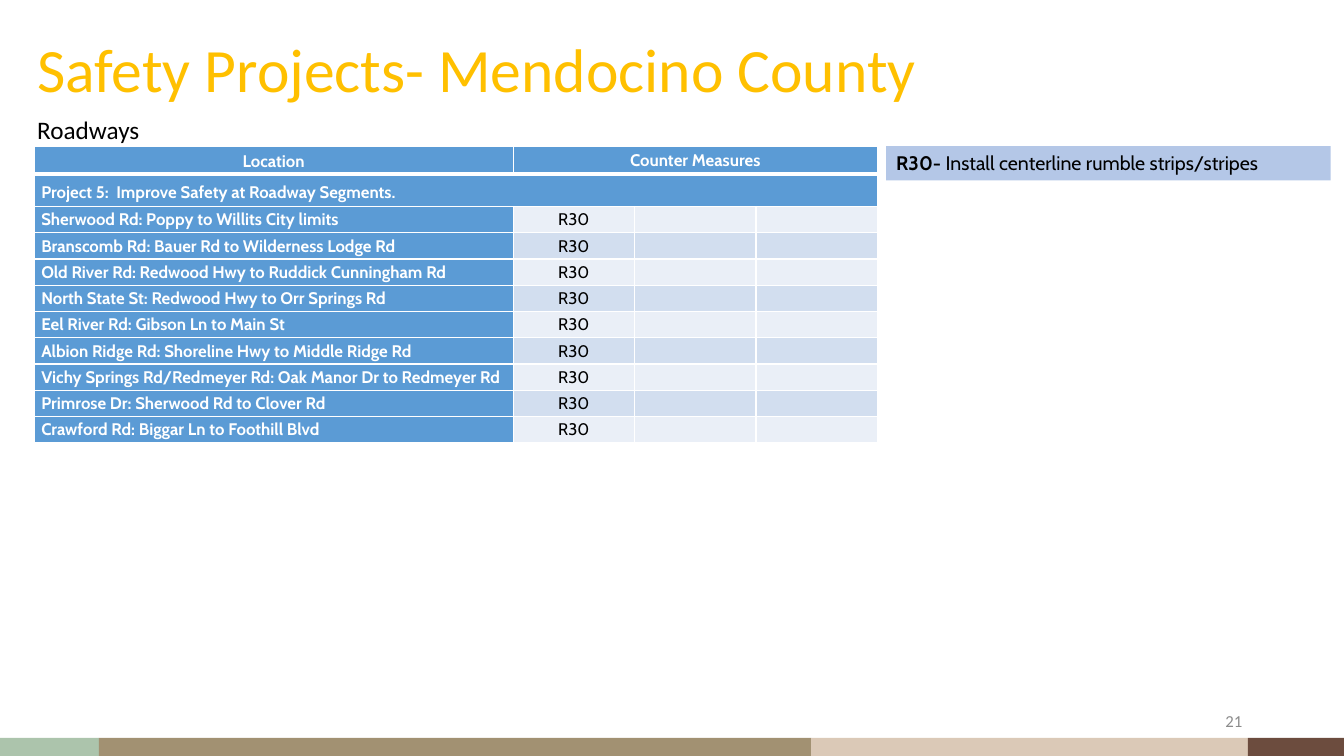
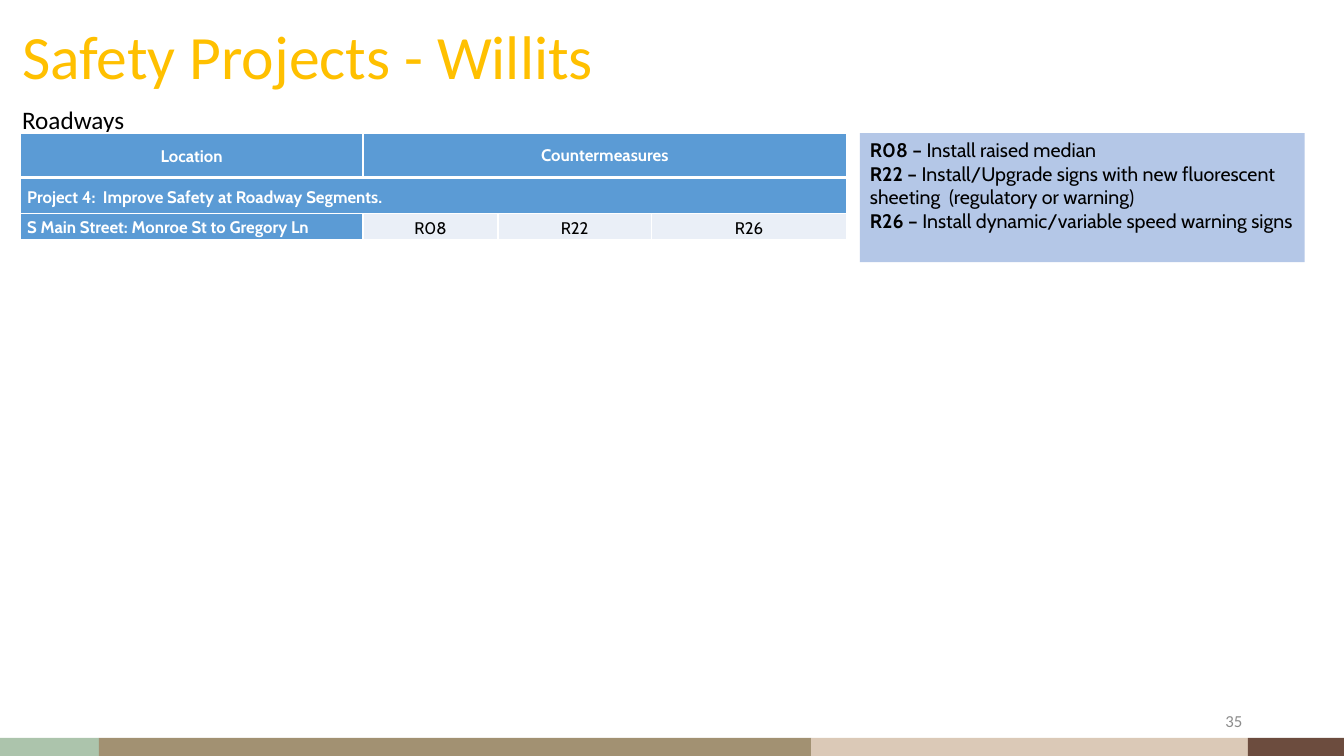
from itertools import accumulate

from lxml.etree import SubElement
from pptx import Presentation
from pptx.dml.color import RGBColor
from pptx.enum.shapes import MSO_SHAPE as Shape
from pptx.enum.text import MSO_ANCHOR as Anchor, PP_ALIGN as Align
from pptx.oxml.ns import qn
from pptx.util import Inches, Pt

WIDTH, HEIGHT = Inches(13.33), Inches(7.5)

WHITE = RGBColor(0xFF, 0xFF, 0xFF)
BLACK = RGBColor(0x00, 0x00, 0x00)
GOLD = RGBColor(0xFF, 0xC0, 0x00)
GREY = RGBColor(0x8C, 0x8C, 0x8C)
BLUE = RGBColor(0x5B, 0x9B, 0xD5)
PALE = RGBColor(0xEA, 0xEF, 0xF7)
LIGHT = RGBColor(0xD2, 0xDE, 0xEF)
NOTE_BLUE = RGBColor(0xB4, 0xC7, 0xE7)

# Footer bands: share of the slide's width in percent, and colour
BANDS = (
    (7.35, RGBColor(0xAC, 0xC4, 0xAC)),
    (53, RGBColor(0xA2, 0x91, 0x72)),
    (32.5, RGBColor(0xDB, 0xC9, 0xB7)),
    (7.35, RGBColor(0x6C, 0x4C, 0x3E)),
)

TITLE = dict(name="Calibri", size=Pt(44), color=GOLD)
SUBTITLE = dict(name="Calibri", size=Pt(18), color=BLACK)
NUMBER = dict(name="Calibri", size=Pt(12), color=GREY)
NOTE = dict(name="Cabin", size=Pt(14), color=BLACK, bold=False)
NOTE_CODE = NOTE | dict(bold=True)
HEADING = dict(name="Cabin", size=Pt(12), color=WHITE, bold=True)
CODE = HEADING | dict(color=BLACK, bold=False)

BODY_ROW = 3.47
CODE_COLUMNS = 3


def across(percent):
    return int(WIDTH * percent / 100)


def down(percent):
    return int(HEIGHT * percent / 100)


def place(left, top, width, height):
    """Turn shares of the slide into a position and size."""
    return across(left), down(top), across(width), down(height)


def add_span(para, text, style):
    span = para.add_run()
    span.text = text
    for name, value in style.items():
        if name == "color":
            span.font.color.rgb = value
        else:
            setattr(span.font, name, value)


def add_text(page, area, text, style, anchor=Anchor.TOP, align=Align.LEFT, spacing=1.0):
    frame = page.shapes.add_textbox(*place(*area)).text_frame
    frame.word_wrap = True
    frame.vertical_anchor = anchor
    para = frame.paragraphs[0]
    para.alignment, para.line_spacing = align, spacing
    add_span(para, text, style)


def add_block(page, area, color):
    block = page.shapes.add_shape(Shape.RECTANGLE, *place(*area))
    block.shadow.inherit = False
    block.fill.solid()
    block.fill.fore_color.rgb = color
    block.line.fill.background()
    return block


def add_bands(page):
    shares = [share for share, _ in BANDS]
    for left, (share, color) in zip(accumulate(shares, initial=0), BANDS):
        add_block(page, (left, 97.6, share, 2.5), color)


def add_note(page, area, lines):
    """Add the key that explains each countermeasure code."""
    frame = add_block(page, area, NOTE_BLUE).text_frame
    frame.word_wrap = True
    frame.vertical_anchor = Anchor.TOP
    for index, (code, meaning) in enumerate(lines):
        para = frame.add_paragraph() if index else frame.paragraphs[0]
        para.alignment = Align.LEFT
        add_span(para, code, NOTE_CODE)
        add_span(para, meaning, NOTE)


def set_borders(cell, top, bottom):
    properties = cell._tc.get_or_add_tcPr()
    for side, points in (("L", 1), ("R", 1), ("T", top), ("B", bottom)):
        line = SubElement(properties, qn(f"a:ln{side}"), w=str(Pt(points)))
        fill = SubElement(line, qn("a:solidFill"))
        SubElement(fill, qn("a:srgbClr"), val=str(WHITE))


def format_cell(cell, color, top=1, bottom=1):
    set_borders(cell, top, bottom)
    cell.fill.solid()
    cell.fill.fore_color.rgb = color
    cell.margin_left = cell.margin_right = Inches(0.07)
    cell.margin_top = cell.margin_bottom = 0


def write_cell(cell, text, style, align=Align.LEFT, anchor=Anchor.TOP, spacing=1.15):
    cell.vertical_anchor = anchor
    para = cell.text_frame.paragraphs[0]
    para.alignment, para.line_spacing = align, spacing
    if text:
        add_span(para, text, style)
    else:
        SubElement(para._p, qn("a:endParaRPr"), sz=str(int(style["size"].pt * 100)))


def add_project_table(page, left, top, columns, head_rows, heading, project,
                      locations, code_anchor):
    """Add a table of locations, each with up to three countermeasure codes."""
    rows = [*head_rows, *[BODY_ROW] * len(locations)]
    area = place(left, top, sum(columns), sum(rows))
    table = page.shapes.add_table(len(rows), len(columns), *area).table
    for column, share in zip(table.columns, columns):
        column.width = across(share)
    for row, share in zip(table.rows, rows):
        row.height = down(share)

    for column in range(len(columns)):
        format_cell(table.cell(0, column), BLUE, bottom=3)
        format_cell(table.cell(1, column), BLUE, top=3)
    table.cell(0, 1).merge(table.cell(0, CODE_COLUMNS))
    table.cell(1, 0).merge(table.cell(1, CODE_COLUMNS))
    write_cell(table.cell(0, 0), "Location", HEADING, Align.CENTER, Anchor.MIDDLE)
    write_cell(table.cell(0, 1), heading, HEADING, Align.CENTER, Anchor.MIDDLE, 1.0)
    write_cell(table.cell(1, 0), project, HEADING, anchor=Anchor.MIDDLE)

    for index, (location, *codes) in enumerate(locations):
        row = index + len(head_rows)
        format_cell(table.cell(row, 0), BLUE)
        write_cell(table.cell(row, 0), location, HEADING)
        codes += [""] * (CODE_COLUMNS - len(codes))
        for column, code in enumerate(codes, start=1):
            cell = table.cell(row, column)
            format_cell(cell, LIGHT if index % 2 else PALE)
            write_cell(cell, code, CODE, Align.CENTER, code_anchor)


def add_page(deck, left, title_top, subtitle_top, title, number):
    page = deck.slides.add_slide(deck.slide_layouts[6])
    add_bands(page)
    add_text(page, (left, title_top, 86.27, 19.33), title, TITLE, Anchor.MIDDLE,
             spacing=0.9)
    add_text(page, (70.67, 92.67, 22.5, 5.33), number, NUMBER, Anchor.MIDDLE, Align.RIGHT)
    add_text(page, (left, subtitle_top, 11.25, 5.33), "Roadways", SUBTITLE)
    return page


def add_county_page(deck):
    page = add_page(deck, 2.03, 0, 14.4, "Safety Projects- Mendocino County", "21")
    roads = (
        "Sherwood Rd: Poppy to Willits City limits",
        "Branscomb Rd: Bauer Rd to Wilderness Lodge Rd",
        "Old River Rd: Redwood Hwy to Ruddick Cunningham Rd",
        "North State St: Redwood Hwy to Orr Springs Rd",
        "Eel River Rd: Gibson Ln to Main St",
        "Albion Ridge Rd: Shoreline Hwy to Middle Ridge Rd",
        "Vichy Springs Rd/Redmeyer Rd: Oak Manor Dr to Redmeyer Rd",
        "Primrose Dr: Sherwood Rd to Clover Rd",
        "Crawford Rd: Biggar Ln to Foothill Blvd",
    )
    add_project_table(
        page, 2.55, 19.33, (35.63, 9.04, 9.04, 9.04), (3.73, 4.27),
        "Counter Measures", "Project 5:  Improve Safety at Roadway Segments.",
        [(road, "R30") for road in roads], Anchor.TOP)
    add_note(page, (65.94, 19.33, 33.08, 4.53),
             [("R30- ", "Install centerline rumble strips/stripes")])


def add_willits_page(deck):
    page = add_page(deck, 0.9, -1.73, 13.2, "Safety Projects - Willits", "35")
    add_project_table(
        page, 1.5, 17.6, (25.51, 10.05, 11.4, 14.55), (5.87, 4.8),
        "Countermeasures", "Project 4:  Improve Safety at Roadway Segments.",
        [("S Main Street: Monroe St to Gregory Ln", "R08", "R22", "R26")],
        Anchor.MIDDLE)
    add_note(page, (63.99, 17.6, 33.08, 17.07), [
        ("R08 – ", "Install raised median"),
        ("R22 – ", "Install/Upgrade signs with new fluorescent sheeting  "
                   "(regulatory or warning)"),
        ("R26 – ", "Install dynamic/variable speed warning signs"),
    ])


def main():
    deck = Presentation()
    deck.slide_width, deck.slide_height = WIDTH, HEIGHT
    add_county_page(deck)
    add_willits_page(deck)
    deck.save("out.pptx")


if __name__ == "__main__":
    main()
